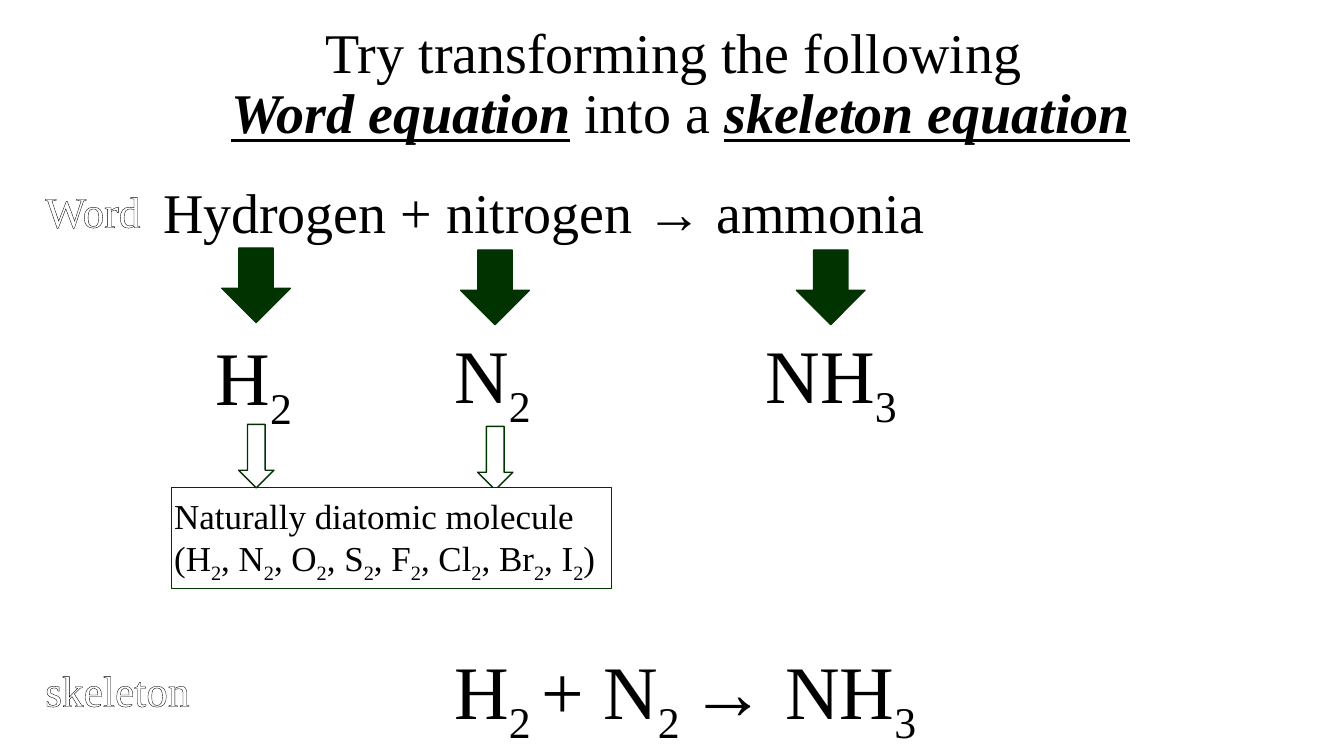
import lxml.etree
import pptx
import pptx.dml.color
import pptx.enum.shapes
import pptx.enum.text
import pptx.oxml
import pptx.oxml.ns
import pptx.util

Cm = pptx.util.Cm
Pt = pptx.util.Pt
Shape = pptx.enum.shapes.MSO_SHAPE
Align = pptx.enum.text.PP_ALIGN
AutoSize = pptx.enum.text.MSO_AUTO_SIZE

BLACK = pptx.dml.color.RGBColor(0x00, 0x00, 0x00)
WHITE = pptx.dml.color.RGBColor(0xFF, 0xFF, 0xFF)
GREEN = pptx.dml.color.RGBColor(0x00, 0x33, 0x00)

OUTLINE = (
    f'<a:ln {pptx.oxml.ns.nsdecls("a")} w="{Pt(0.75)}">'
    f'<a:solidFill><a:srgbClr val="{BLACK}"/></a:solidFill></a:ln>'
)


class EquationSlide:
    font_name = "Times New Roman"

    def __init__(self, deck):
        self.page = deck.slides.add_slide(deck.slide_layouts[5])

    def format_font(self, span, size, color=BLACK, **extra):
        span.font.color.rgb = color
        values = {"name": self.font_name, "size": Pt(size), **extra}
        for name, value in values.items():
            setattr(span.font, name, value)

    def title(self, lines, place, size):
        """Words between asterisks are bold, italic and underlined."""
        box = self.page.shapes.title
        box.left, box.top, box.width, box.height = map(Cm, place)
        frame = box.text_frame
        frame.word_wrap = True
        frame.vertical_anchor = pptx.enum.text.MSO_ANCHOR.MIDDLE
        para = frame.paragraphs[0]
        para.alignment = Align.CENTER
        para.line_spacing = 0.9
        for number, line in enumerate(lines):
            if number:
                para.add_line_break()
            for index, words in enumerate(line.split("*")):
                if words:
                    span = para.add_run()
                    span.text = words
                    strong = index % 2 == 1
                    self.format_font(span, size, bold=strong, italic=strong, underline=strong)

    def text(self, lines, place, size, color=BLACK, wrap=False, outlined=False):
        """Characters between underscores are subscripts."""
        box = self.page.shapes.add_textbox(*map(Cm, place))
        frame = box.text_frame
        frame.word_wrap = wrap
        frame.auto_size = AutoSize.SHAPE_TO_FIT_TEXT
        for number, line in enumerate(lines):
            para = frame.add_paragraph() if number else frame.paragraphs[0]
            for index, words in enumerate(line.split("_")):
                if not words:
                    continue
                span = para.add_run()
                span.text = words
                self.format_font(span, size, color)
                properties = span._r.get_or_add_rPr()
                if index % 2:
                    properties.set("baseline", "-25000")
                if outlined:
                    properties.insert(0, pptx.oxml.parse_xml(OUTLINE))

    def shape(self, kind, place, fill, rotation=0):
        shape = self.page.shapes.add_shape(kind, *map(Cm, place))
        shape.shadow.inherit = False
        shape.rotation = rotation
        shape.fill.solid()
        shape.fill.fore_color.rgb = fill
        shape.line.color.rgb = GREEN
        shape.line.width = Pt(1)


def main():
    deck = pptx.Presentation()
    deck.slide_width, deck.slide_height = Cm(33.87), Cm(19.05)
    slide = EquationSlide(deck)

    slide.title(
        ["Try transforming the following ", "*Word equation* into a *skeleton equation*"],
        (0.43, 0.3, 33.44, 3.71), 40,
    )
    slide.text(["H_2 _+ N_2 _→ NH_3"], (11.2, 16.1, 12.93, 2.57), 54)
    slide.text(["Hydrogen + nitrogen → ammonia"], (3.86, 4.34, 19.91, 1.96), 40)

    for label, top, width in (("Word", 4.52, 2.97), ("skeleton", 16.59, 4.19)):
        slide.text([label], (0.89, top, width, 1.57), 31, WHITE, outlined=True)

    for left, top in ((5.59, 6.25), (11.61, 6.3), (20.07, 6.3)):
        slide.shape(Shape.DOWN_ARROW, (left, top, 1.73, 1.88), GREEN)

    formulas = (
        ("H_2", 5.18, 8.18, 2.54),
        ("N_2", 11.2, 8.13, 2.54),
        ("NH_3", 19.05, 8.13, 3.94),
    )
    for formula, left, top, width in formulas:
        slide.text([formula], (left, top, width, 2.57), 54)

    slide.shape(Shape.RIGHT_ARROW, (11.68, 11.1, 1.6, 0.89), WHITE, rotation=90)
    slide.shape(Shape.RECTANGLE, (4.32, 12.29, 11.1, 2.54), WHITE)
    elements = ("H", "N", "O", "S", "F", "Cl", "Br", "I")
    diatomic = ", ".join(f"{element}_2_" for element in elements)
    slide.text(
        ["Naturally diatomic molecule", f"({diatomic})"],
        (4.14, 12.34, 11.53, 2.41), 25, wrap=True,
    )
    slide.shape(Shape.RIGHT_ARROW, (5.66, 11.05, 1.6, 0.89), WHITE, rotation=90)

    deck.save("out.pptx")


if __name__ == "__main__":
    main()
